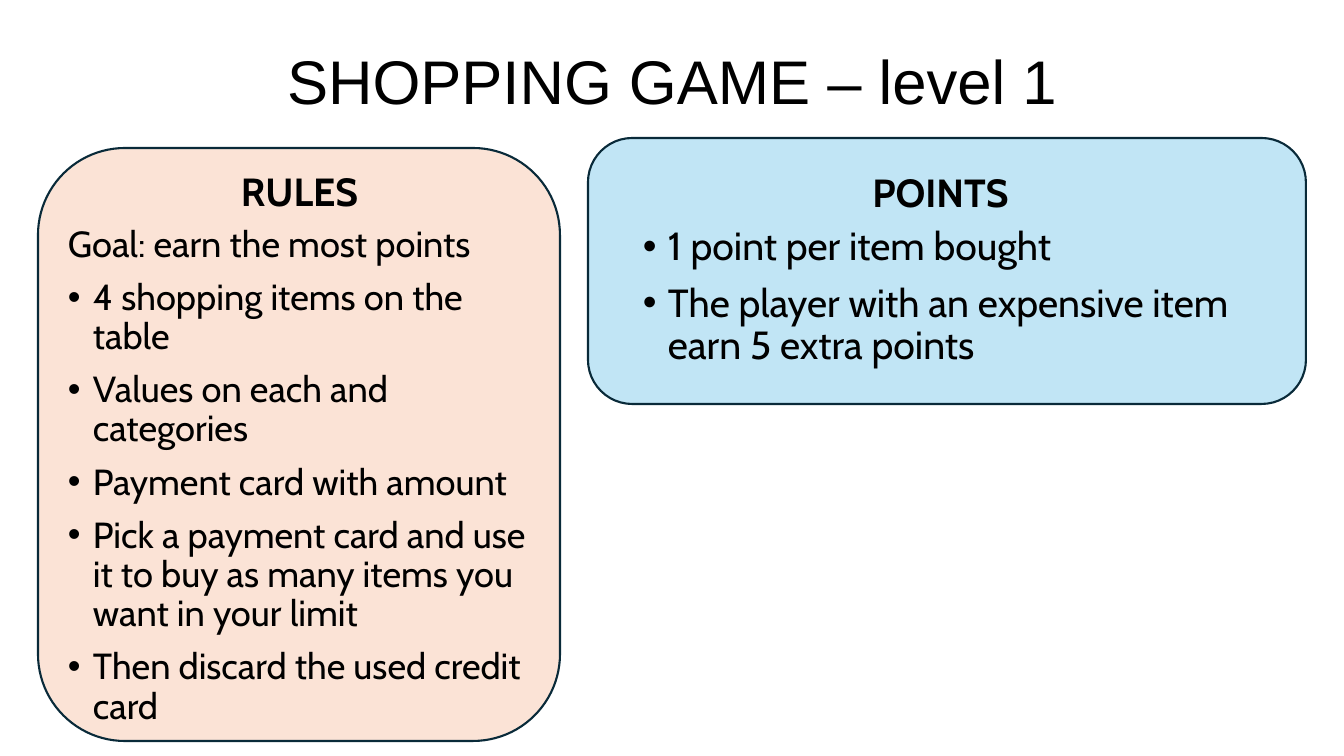
from lxml.etree import SubElement
from pptx import Presentation
from pptx.dml.color import RGBColor
from pptx.enum.shapes import MSO_SHAPE as Shape
from pptx.enum.text import MSO_ANCHOR as Anchor, PP_ALIGN as Align
from pptx.oxml.ns import qn
from pptx.util import Emu, Pt

TITLE = {"text": "SHOPPING GAME – level 1", "box": (93, 40, 1159, 89)}
PANELS = [
    {
        "fill": "peach",
        "panel": (38, 148, 522, 593),
        "heading": ("RULES", (58, 162, 483, 57)),
        "body": (58, 221, 483, 521),
        "size": "rules",
        "intro": ["Goal: earn the most points"],
        "bullets": [
            "4 shopping items on the table",
            "Values on each and categories",
            "Payment card with amount",
            "Pick a payment card and use it to buy as many items you want in your limit",
            "Then discard the used credit card",
        ],
    },
    {
        "fill": "sky",
        "panel": (588, 138, 718, 266),
        "heading": ("POINTS", (614, 163, 653, 57)),
        "body": (633, 222, 653, 480),
        "size": "points",
        "intro": [],
        "bullets": [
            "1 point per item bought",
            "The player with an expensive item earn 5 extra points",
        ],
    },
]
THEME = {
    "colors": {"text": "000000", "outline": "092A39", "peach": "FBE3D6", "sky": "C1E5F5"},
    "sizes": {"title": 44, "heading": 28, "rules": 25.9, "points": 28},
    "fonts": {"title": "Arial", "text": "Cabin"},
}
SLIDE_SIZE = (1344, 756)
BULLET_INDENT = 25
LINE_SPACING = 0.9
PARAGRAPH_GAP = 10


def px(value):
    return Emu(round(value * 914400 / 100.8))


def color(name):
    return RGBColor.from_string(THEME["colors"][name])


def apply_format(target, values):
    for name, value in values.items():
        setattr(target, name, value)


def add_panel(slide, box, fill):
    shape = slide.shapes.add_shape(Shape.ROUNDED_RECTANGLE, *map(px, box))
    shape.shadow.inherit = False
    shape.fill.solid()
    shape.fill.fore_color.rgb = color(fill)
    shape.line.color.rgb = color("outline")
    shape.line.width = Pt(1.5)


def add_bullet(paragraph):
    properties = paragraph._p.get_or_add_pPr()
    properties.set("marL", str(px(BULLET_INDENT)))
    properties.set("indent", str(-px(BULLET_INDENT)))
    SubElement(properties, qn("a:buFont"), typeface="Arial")
    SubElement(properties, qn("a:buChar"), char="•")


def add_text(slide, box, lines, size, font="text", bold=False, anchor=Anchor.TOP, **layout):
    frame = slide.shapes.add_textbox(*map(px, box)).text_frame
    apply_format(frame, {"word_wrap": True, "vertical_anchor": anchor})
    for index, (text, bulleted) in enumerate(lines):
        paragraph = frame.add_paragraph() if index else frame.paragraphs[0]
        if bulleted:
            add_bullet(paragraph)
        apply_format(paragraph, layout)
        if index:
            paragraph.space_before = Pt(PARAGRAPH_GAP)
        run = paragraph.add_run()
        run.text = text
        apply_format(run.font, {
            "name": THEME["fonts"][font],
            "size": Pt(THEME["sizes"][size]),
            "bold": bold,
        })
        run.font.color.rgb = color("text")


def main():
    presentation = Presentation()
    width, height = map(px, SLIDE_SIZE)
    apply_format(presentation, {"slide_width": width, "slide_height": height})
    slide = presentation.slides.add_slide(presentation.slide_layouts[6])
    add_text(slide, TITLE["box"], [(TITLE["text"], False)], "title", font="title",
             anchor=Anchor.MIDDLE, alignment=Align.CENTER, line_spacing=LINE_SPACING)
    for panel in PANELS:
        add_panel(slide, panel["panel"], panel["fill"])
        heading, heading_box = panel["heading"]
        add_text(slide, heading_box, [(heading, False)], "heading", bold=True,
                 alignment=Align.CENTER)
        lines = [(text, False) for text in panel["intro"]]
        lines += [(text, True) for text in panel["bullets"]]
        add_text(slide, panel["body"], lines, panel["size"], line_spacing=LINE_SPACING)
    presentation.save("out.pptx")


if __name__ == "__main__":
    main()
